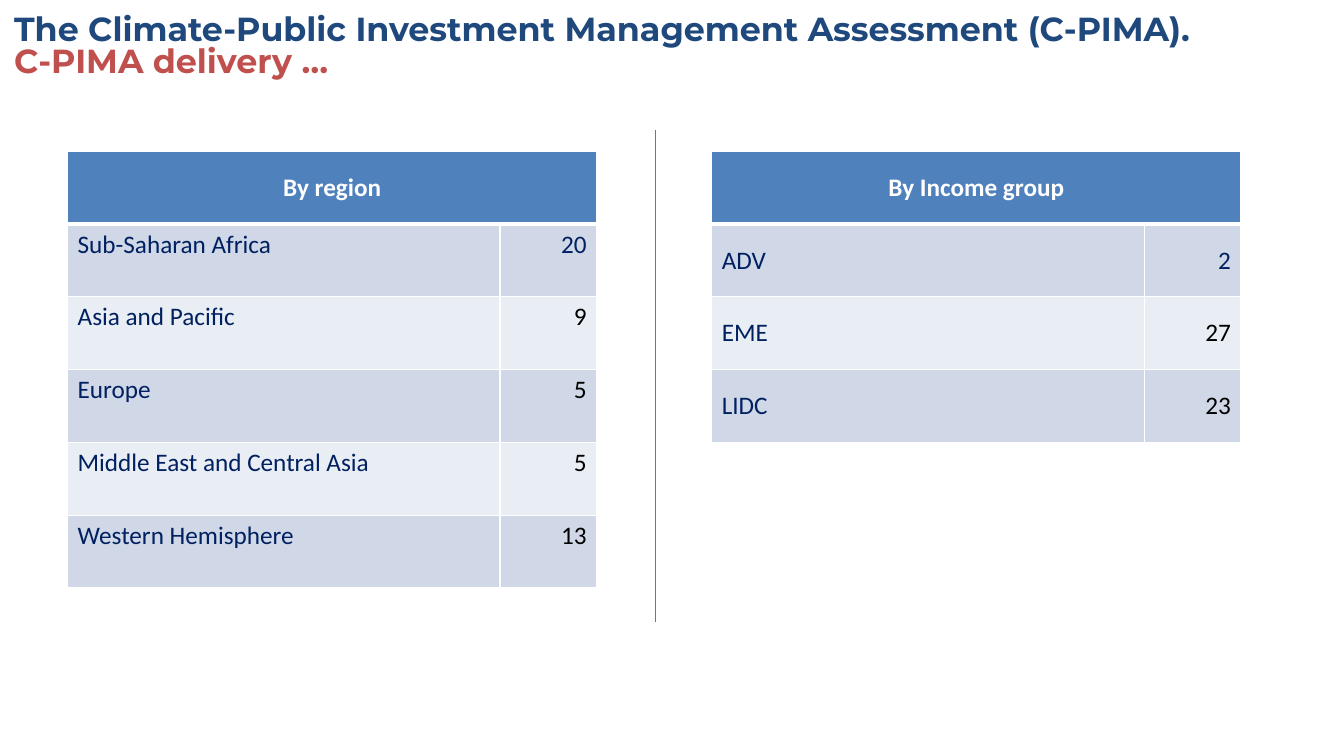
from dataclasses import dataclass

from lxml.etree import SubElement
from pptx import Presentation
from pptx.dml.color import RGBColor
from pptx.enum.shapes import MSO_CONNECTOR
from pptx.enum.text import MSO_ANCHOR, PP_ALIGN
from pptx.oxml.ns import qn
from pptx.slide import Slide
from pptx.table import _Cell
from pptx.text.text import _Paragraph
from pptx.util import Emu, Inches, Pt

SLIDE_WIDTH = Inches(13.33)
SLIDE_HEIGHT = Inches(7.5)

WHITE = "FFFFFF"
BLACK = "000000"
NAVY = "002060"
HEADER_BLUE = "4F81BD"
BANDS = ("D0D8E8", "E9EDF4")

# Shares of the slide's size, in percent
TABLE_TOP = 20
ROW_HEIGHT = 9.63
LABEL_WIDTH = 32.18
COUNT_WIDTH = 7.2


@dataclass(frozen=True)
class DeliveryTable:
    heading: str
    left: float
    anchor: MSO_ANCHOR
    counts: tuple[tuple[str, int], ...]


@dataclass(frozen=True)
class TitleLine:
    text: str
    color: str


TITLE_LINES = (
    TitleLine("The Climate-Public Investment Management Assessment (C-PIMA).", "1F497D"),
    TitleLine("C-PIMA delivery …", "C0504D"),
)

DELIVERY_TABLES = (
    DeliveryTable("By region", 5.03, MSO_ANCHOR.TOP, (
        ("Sub-Saharan Africa", 20),
        ("Asia and Pacific", 9),
        ("Europe", 5),
        ("Middle East and Central Asia", 5),
        ("Western Hemisphere", 13),
    )),
    DeliveryTable("By Income group", 52.96, MSO_ANCHOR.MIDDLE, (
        ("ADV", 2),
        ("EME", 27),
        ("LIDC", 23),
    )),
)


def across(percent: float) -> Emu:
    return Emu(round(SLIDE_WIDTH * percent / 100))


def down(percent: float) -> Emu:
    return Emu(round(SLIDE_HEIGHT * percent / 100))


def color_of(hex_color: str) -> RGBColor:
    return RGBColor.from_string(hex_color)


def add_run(paragraph: _Paragraph, text: str, font_name: str, size: float,
            color: str, bold: bool) -> None:
    run = paragraph.add_run()
    run.text = text
    run.font.name = font_name
    run.font.size = Pt(size)
    run.font.bold = bold
    run.font.color.rgb = color_of(color)


def add_title(slide: Slide) -> None:
    box = slide.shapes.add_textbox(across(1.05), down(0.27), across(98.95), down(12.13))
    frame = box.text_frame
    frame.word_wrap = True
    frame.vertical_anchor = MSO_ANCHOR.MIDDLE
    frame.margin_left = frame.margin_right = frame.margin_top = frame.margin_bottom = 0
    for index, line in enumerate(TITLE_LINES):
        paragraph = frame.add_paragraph() if index else frame.paragraphs[0]
        paragraph.line_spacing = 0.8
        add_run(paragraph, line.text, "Montserrat", 23.8, line.color, True)


def add_divider(slide: Slide) -> None:
    divider = slide.shapes.add_connector(
        MSO_CONNECTOR.STRAIGHT, across(48.76), down(17.2), across(48.76), down(82.27))
    divider.line.color.rgb = color_of("4B7EBC")
    divider.line.width = Pt(0.75)
    SubElement(divider._element.spPr, qn("a:effectLst"))


def add_borders(cell: _Cell, top: float, bottom: float) -> None:
    """Draw white borders; must run before the cell's fill is set."""
    properties = cell._tc.get_or_add_tcPr()
    for side, width in (("L", 1), ("R", 1), ("T", top), ("B", bottom)):
        border = SubElement(properties, qn(f"a:ln{side}"), w=str(Pt(width)))
        fill = SubElement(border, qn("a:solidFill"))
        SubElement(fill, qn("a:srgbClr"), val=WHITE)


def fill_cell(cell: _Cell, text: str, fill: str, color: str, align: PP_ALIGN,
              anchor: MSO_ANCHOR, bold: bool = False) -> None:
    cell.fill.solid()
    cell.fill.fore_color.rgb = color_of(fill)
    cell.vertical_anchor = anchor
    paragraph = cell.text_frame.paragraphs[0]
    paragraph.alignment = align
    add_run(paragraph, text, "Calibri", 18, color, bold)


def add_delivery_table(slide: Slide, content: DeliveryTable) -> None:
    row_count = len(content.counts) + 1
    table = slide.shapes.add_table(
        row_count, 2, across(content.left), down(TABLE_TOP),
        across(LABEL_WIDTH + COUNT_WIDTH), down(ROW_HEIGHT * row_count)).table
    for column, width in zip(table.columns, (LABEL_WIDTH, COUNT_WIDTH)):
        column.width = across(width)
    for index, row in enumerate(table.rows):
        row.height = down(ROW_HEIGHT)
        for cell in row.cells:
            add_borders(cell, 3 if index == 1 else 1, 3 if index == 0 else 1)

    header = table.cell(0, 0)
    header.merge(table.cell(0, 1))
    fill_cell(header, content.heading, HEADER_BLUE, WHITE, PP_ALIGN.CENTER,
              MSO_ANCHOR.MIDDLE, bold=True)
    for index, (label, count) in enumerate(content.counts):
        band = BANDS[index % 2]
        count_color = BLACK if index else NAVY
        fill_cell(table.cell(index + 1, 0), label, band, NAVY,
                  PP_ALIGN.LEFT, content.anchor)
        fill_cell(table.cell(index + 1, 1), str(count), band, count_color,
                  PP_ALIGN.RIGHT, content.anchor)


def main() -> None:
    presentation = Presentation()
    presentation.slide_width = SLIDE_WIDTH
    presentation.slide_height = SLIDE_HEIGHT
    slide = presentation.slides.add_slide(presentation.slide_layouts[6])
    add_title(slide)
    add_divider(slide)
    for content in DELIVERY_TABLES:
        add_delivery_table(slide, content)
    presentation.save("out.pptx")


if __name__ == "__main__":
    main()
